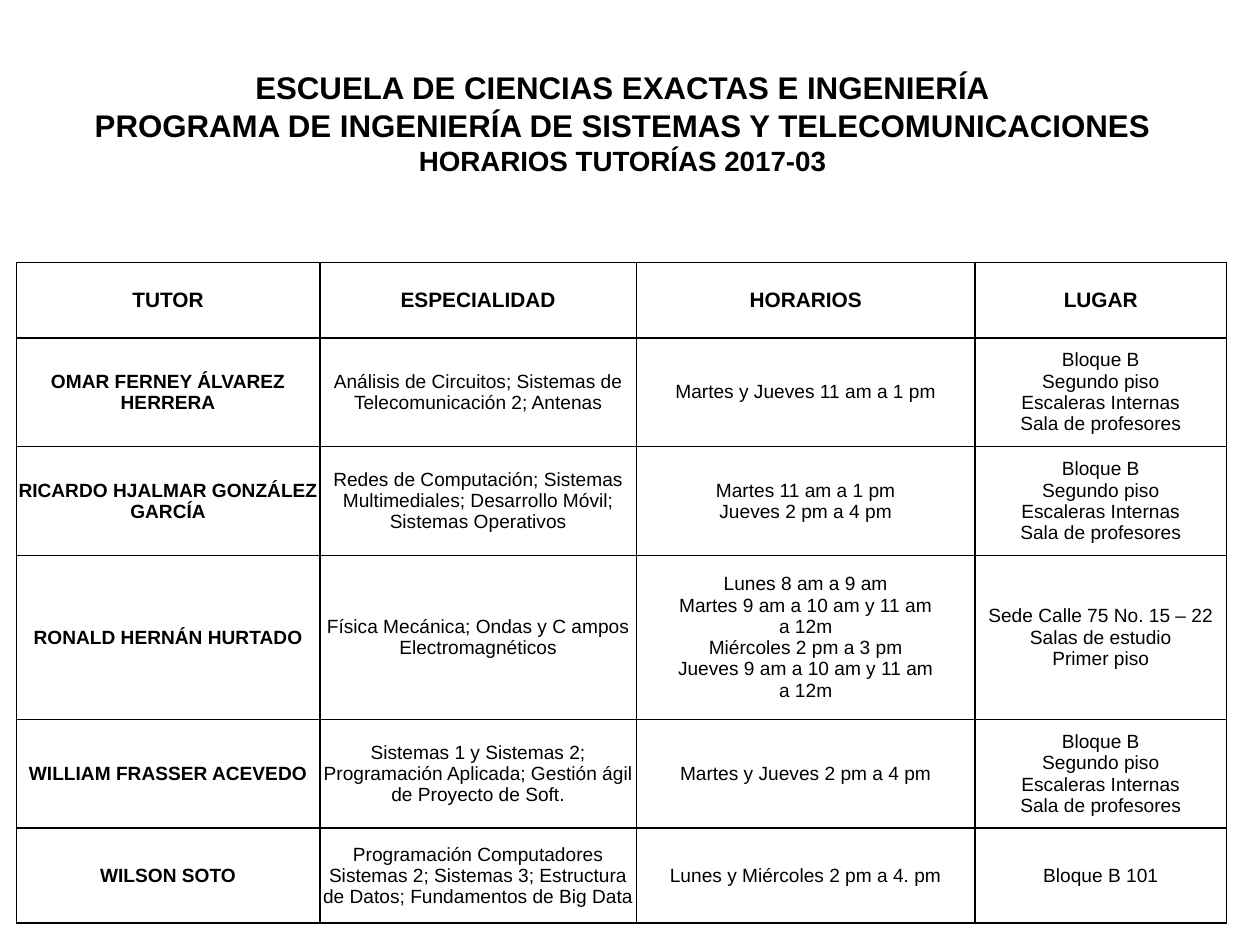
from dataclasses import dataclass

import lxml.etree
import pptx
import pptx.dml.color
import pptx.enum.text
import pptx.oxml.ns
import pptx.table
import pptx.text.text
import pptx.util

Cm = pptx.util.Cm
Pt = pptx.util.Pt
qn = pptx.oxml.ns.qn

BLACK = pptx.dml.color.RGBColor(0, 0, 0)
FONT = "Arial"
COLUMN_WIDTHS = [Cm(6.17), Cm(6.43), Cm(6.88), Cm(5.11)]
HEADER_HEIGHT = Cm(1.53)
HEADERS = ["TUTOR", "ESPECIALIDAD", "HORARIOS", "LUGAR"]
TEACHERS_ROOM = "Bloque B\nSegundo piso\nEscaleras Internas\nSala de profesores"


@dataclass
class Tutor:
    name: str
    subjects: str
    hours: str
    place: str
    row_height: pptx.util.Length


TUTORS = [
    Tutor("OMAR FERNEY ÁLVAREZ HERRERA",
          "Análisis de Circuitos; Sistemas de Telecomunicación 2; Antenas",
          "Martes y Jueves 11 am a 1 pm", TEACHERS_ROOM, Cm(2.21)),
    Tutor("RICARDO HJALMAR GONZÁLEZ GARCÍA",
          "Redes de Computación; Sistemas Multimediales; Desarrollo Móvil; "
          "Sistemas Operativos",
          "Martes 11 am a 1 pm\nJueves 2 pm a 4 pm", TEACHERS_ROOM, Cm(2.21)),
    Tutor("RONALD HERNÁN HURTADO",
          "Física Mecánica; Ondas y C ampos Electromagnéticos",
          "Lunes 8 am a 9 am\nMartes 9 am a 10 am y 11 am\na 12m\n"
          "Miércoles 2 pm a 3 pm\nJueves 9 am a 10 am y 11 am\na 12m",
          "Sede Calle 75 No. 15 – 22\nSalas de estudio\nPrimer piso", Cm(3.33)),
    Tutor("WILLIAM FRASSER ACEVEDO",
          "Sistemas 1 y Sistemas 2; Programación Aplicada; Gestión ágil "
          "de Proyecto de Soft.",
          "Martes y Jueves 2 pm a 4 pm", TEACHERS_ROOM, Cm(2.21)),
    Tutor("WILSON SOTO",
          "Programación Computadores Sistemas 2; Sistemas 3; Estructura "
          "de Datos; Fundamentos de Big Data",
          "Lunes y Miércoles 2 pm a 4. pm", "Bloque B 101", Cm(1.93)),
]


def style_paragraph(para: pptx.text.text._Paragraph, size: int, bold: bool) -> None:
    para.alignment = pptx.enum.text.PP_ALIGN.CENTER
    para.font.name = FONT
    para.font.size = Pt(size)
    para.font.bold = bold
    para.font.color.rgb = BLACK


def add_borders(cell: pptx.table._Cell) -> None:
    """Put a thin black line on all four sides, ahead of the cell's fill."""
    properties = cell._tc.get_or_add_tcPr()
    for position, side in enumerate(("a:lnL", "a:lnR", "a:lnT", "a:lnB")):
        line = lxml.etree.Element(qn(side), w=str(Pt(1)))
        fill = lxml.etree.SubElement(line, qn("a:solidFill"))
        lxml.etree.SubElement(fill, qn("a:srgbClr"), val=str(BLACK))
        properties.insert(position, line)


def fill_cell(cell: pptx.table._Cell, text: str, size: int, bold: bool) -> None:
    cell.text = text
    cell.vertical_anchor = pptx.enum.text.MSO_ANCHOR.MIDDLE
    cell.margin_left = cell.margin_right = cell.margin_top = cell.margin_bottom = 0
    cell.fill.background()
    add_borders(cell)
    for para in cell.text_frame.paragraphs:
        style_paragraph(para, size, bold)


def add_title(page: pptx.slide.Slide) -> None:
    box = page.shapes.add_textbox(Cm(0.05), Cm(1.27), Cm(25.2), Cm(2.49))
    frame = box.text_frame
    frame.word_wrap = True
    frame.text = ("ESCUELA DE CIENCIAS EXACTAS E INGENIERÍA\n"
                  "PROGRAMA DE INGENIERÍA DE SISTEMAS Y TELECOMUNICACIONES\n"
                  "HORARIOS TUTORÍAS 2017-03")
    for para, size in zip(frame.paragraphs, (18, 18, 16)):
        style_paragraph(para, size, bold=True)


def add_schedule(page: pptx.slide.Slide) -> None:
    heights = [HEADER_HEIGHT] + [tutor.row_height for tutor in TUTORS]
    table = page.shapes.add_table(
        len(heights), len(COLUMN_WIDTHS), Cm(0.33), Cm(5.33),
        sum(COLUMN_WIDTHS), sum(heights)).table
    table.first_row = table.horz_banding = False
    for column, width in zip(table.columns, COLUMN_WIDTHS):
        column.width = width
    for row, height in zip(table.rows, heights):
        row.height = height
    for column, header in enumerate(HEADERS):
        fill_cell(table.cell(0, column), header, 12, bold=True)
    for row, tutor in enumerate(TUTORS, start=1):
        texts = (tutor.name, tutor.subjects, tutor.hours, tutor.place)
        for column, text in enumerate(texts):
            fill_cell(table.cell(row, column), text, 11, bold=column == 0)


def main() -> None:
    deck = pptx.Presentation()
    deck.slide_width, deck.slide_height = Cm(25.6), Cm(19.05)
    page = deck.slides.add_slide(deck.slide_layouts[6])
    add_schedule(page)
    add_title(page)
    deck.save("out.pptx")


if __name__ == "__main__":
    main()
